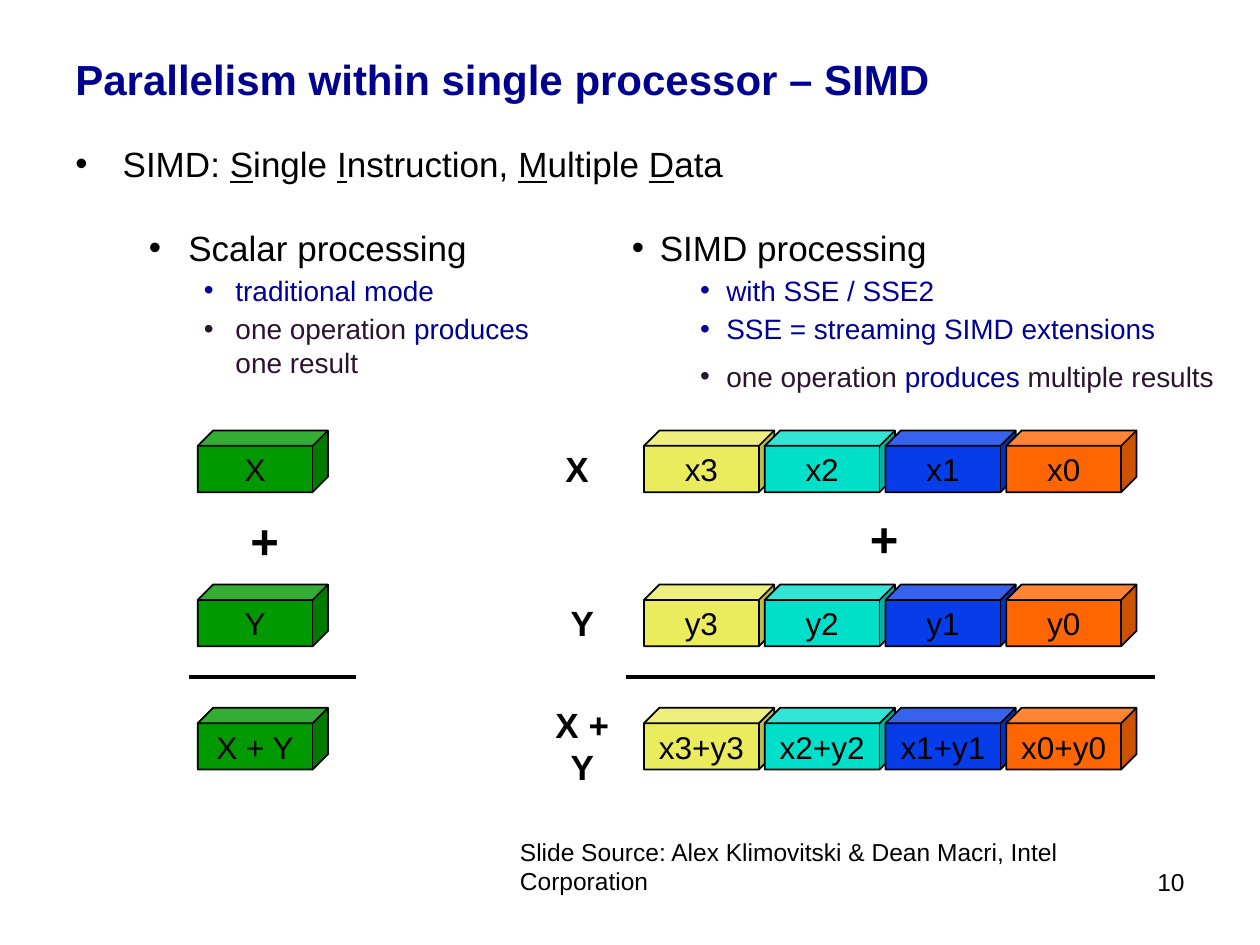
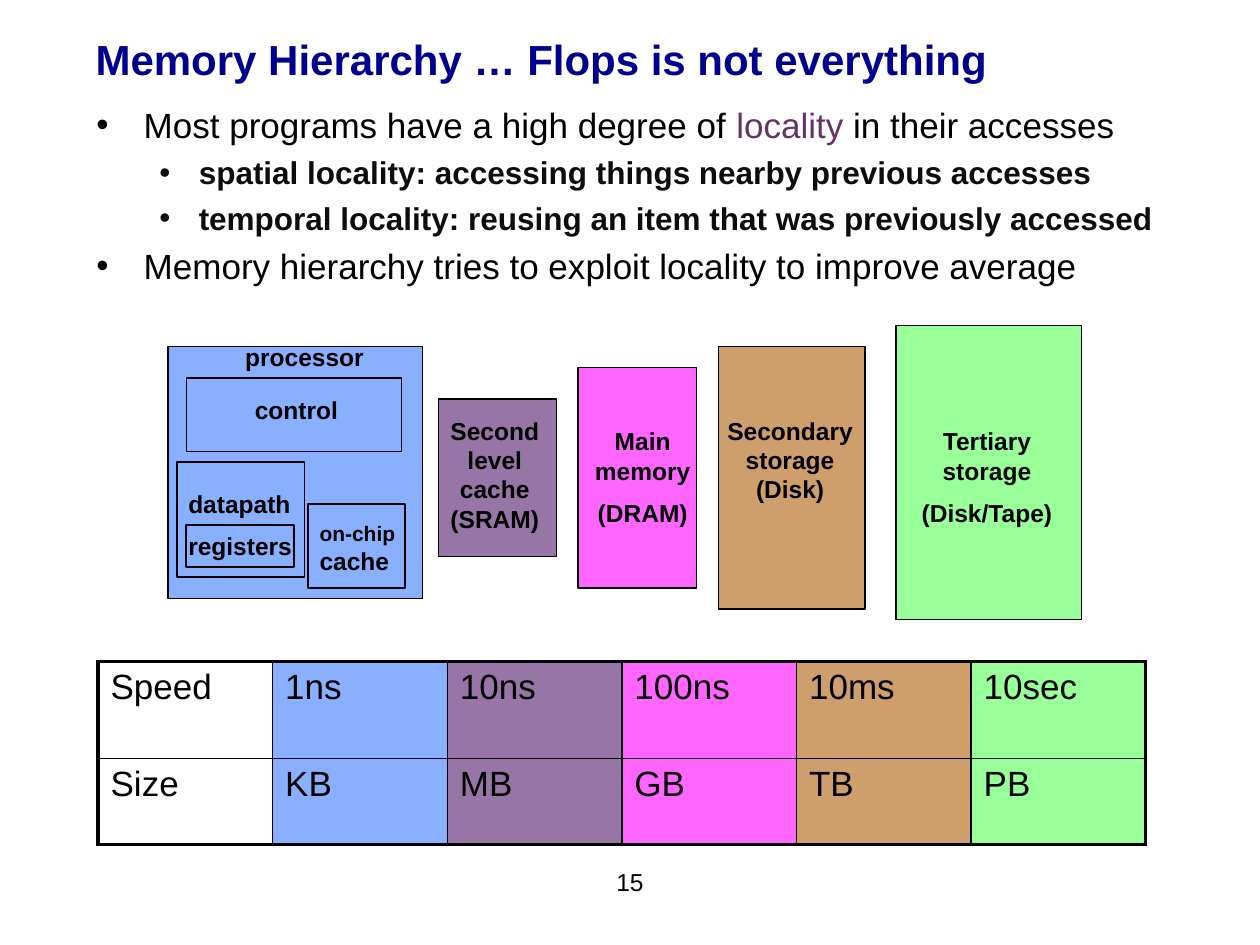
from dataclasses import dataclass

from lxml.etree import SubElement
from pptx import Presentation
from pptx.dml.color import RGBColor
from pptx.enum.shapes import MSO_CONNECTOR, MSO_SHAPE
from pptx.enum.text import MSO_ANCHOR as ANCHOR, PP_ALIGN as ALIGN
from pptx.oxml.ns import qn
from pptx.util import Pt


@dataclass(frozen=True)
class Theme:
    font: str = "Arial"
    # colours
    ink: str = "000000"
    soft_ink: str = "0D0D0D"
    title: str = "000090"
    accent: str = "000099"
    plum: str = "2B142D"
    locality: str = "663366"
    scalar: str = "009900"
    lanes: tuple = ("EAEC5E", "00DFCA", "063DE8", "FF6600")
    levels: tuple = ("89B0FF", "9775A7", "FF66FF", "CF9E6D", "99FF99")
    # type sizes
    sign: int = 28
    heading: int = 24
    body: int = 20
    cube: int = 18
    detail: int = 16
    small: int = 14
    tiny: int = 12
    # line widths
    thin: float = 1
    rule: float = 2
    frame: float = 2.25


T = Theme()


def add_text(p, text, *, size=T.body, color=T.ink, bold=False, underline=False):
    """Add text to a paragraph, turning each newline into a line break."""
    for i, line in enumerate(text.split("\n")):
        if i:
            p.add_line_break()
        if not line:
            continue
        r = p.add_run()
        r.text = line
        f = r.font
        f.name, f.size, f.bold, f.underline = T.font, Pt(size), bold, underline
        f.color.rgb = RGBColor.from_string(color)


def set_bullet(p, level, margin, hang):
    p.level = level
    pPr = p._p.get_or_add_pPr()
    pPr.set("marL", str(Pt(margin)))
    pPr.set("indent", str(-Pt(hang)))
    SubElement(pPr, qn("a:buFont")).set("typeface", T.font)
    SubElement(pPr, qn("a:buChar")).set("char", "•")


def set_border(cell, side, width):
    ln = SubElement(cell._tc.get_or_add_tcPr(), qn(f"a:ln{side}"), w=str(Pt(width)))
    fill = SubElement(ln, qn("a:solidFill"))
    SubElement(fill, qn("a:srgbClr"), val=T.ink)


class Deck:
    def __init__(self, width, height):
        self.prs = Presentation()
        self.prs.slide_width, self.prs.slide_height = Pt(width), Pt(height)
        self.s = None

    def new_slide(self):
        self.s = self.prs.slides.add_slide(self.prs.slide_layouts[6])

    def frame(self, x, y, w, h, wrap=True, anchor=ANCHOR.TOP):
        tf = self.s.shapes.add_textbox(Pt(x), Pt(y), Pt(w), Pt(h)).text_frame
        tf.word_wrap, tf.vertical_anchor = wrap, anchor
        return tf

    def text(self, x, y, w, h, *paragraphs, align=ALIGN.LEFT, wrap=True,
             anchor=ANCHOR.TOP, gap=7.5, **fmt):
        tf = self.frame(x, y, w, h, wrap, anchor)
        for i, text in enumerate(paragraphs):
            p = tf.add_paragraph() if i else tf.paragraphs[0]
            p.alignment = align
            if i:
                p.space_before = Pt(gap)
            add_text(p, text, **fmt)
        return tf

    def title(self, x, y, w, h, text):
        self.text(x, y, w, h, text, anchor=ANCHOR.MIDDLE,
                  size=T.heading, color=T.title, bold=True)

    def bullets(self, x, y, w, h, indents, gap, items):
        """Items are (level, runs) or (level, runs, gap); runs are (text, format)."""
        tf = self.frame(x, y, w, h)
        for i, (level, runs, *own_gap) in enumerate(items):
            p = tf.add_paragraph() if i else tf.paragraphs[0]
            set_bullet(p, level, *indents[level])
            if i:
                p.space_before = Pt(own_gap[0] if own_gap else gap)
            for text, fmt in runs:
                add_text(p, text, **fmt)

    def shape(self, kind, x, y, w, h, fill=None):
        sp = self.s.shapes.add_shape(kind, Pt(x), Pt(y), Pt(w), Pt(h))
        sp.shadow.inherit = False
        if fill:
            sp.fill.solid()
            sp.fill.fore_color.rgb = RGBColor.from_string(fill)
        else:
            sp.fill.background()
        sp.line.color.rgb = RGBColor.from_string(T.ink)
        sp.line.width = Pt(T.thin)
        return sp

    def cube(self, x, y, text, fill):
        tf = self.shape(MSO_SHAPE.CUBE, x, y, 74.5, 35.25, fill).text_frame
        tf.word_wrap, tf.vertical_anchor = False, ANCHOR.MIDDLE
        p = tf.paragraphs[0]
        p.alignment = ALIGN.CENTER
        add_text(p, text, size=T.cube)

    def rect(self, x, y, w, h, fill=None):
        self.shape(MSO_SHAPE.RECTANGLE, x, y, w, h, fill)

    def hline(self, x1, x2, y):
        c = self.s.shapes.add_connector(
            MSO_CONNECTOR.STRAIGHT, Pt(x1), Pt(y), Pt(x2), Pt(y))
        c.line.color.rgb = RGBColor.from_string(T.ink)
        c.line.width = Pt(T.rule)
        SubElement(c._element.spPr, qn("a:effectLst"))

    def table(self, x, y, col_width, row_heights, rows, fills):
        """Draw a grid with one fill a column and a heavier outer frame."""
        n_rows, n_cols = len(rows), len(fills)
        tbl = self.s.shapes.add_table(
            n_rows, n_cols, Pt(x), Pt(y),
            Pt(col_width * n_cols), Pt(sum(row_heights))).table
        tbl.first_row = tbl.horz_banding = False
        for col in tbl.columns:
            col.width = Pt(col_width)
        for i, (row, height) in enumerate(zip(rows, row_heights)):
            tbl.rows[i].height = Pt(height)
            for j, (text, fill) in enumerate(zip(row, fills)):
                cell = tbl.cell(i, j)
                outer = {"L": j == 0, "R": j == n_cols - 1,
                         "T": i == 0, "B": i == n_rows - 1}
                for side, is_outer in outer.items():
                    set_border(cell, side, T.frame if is_outer else T.thin)
                if fill:
                    cell.fill.solid()
                    cell.fill.fore_color.rgb = RGBColor.from_string(fill)
                else:
                    cell.fill.background()
                add_text(cell.text_frame.paragraphs[0], text)


BODY_INDENTS = ((27, 27), (58.5, 22.5))


def simd_slide(d):
    d.new_slide()
    d.title(36, 18, 588, 54, "Parallelism within single processor – SIMD")
    acronym = [("SIMD: ", {})]
    for word, end in (("Single", " "), ("Instruction", ", "),
                      ("Multiple", " "), ("Data", "")):
        acronym += [(word[0], {"underline": True}), (word[1:] + end, {})]
    d.bullets(36, 78, 636, 40, BODY_INDENTS, 4.5, [(0, acronym)])

    blue = {"size": T.detail, "color": T.accent}
    plum = {"size": T.detail, "color": T.plum}
    d.bullets(78, 126, 313, 120, ((22.5, 22.5), (49.5, 18)), 2.75, [
        (0, [("Scalar processing", {})]),
        (1, [("traditional mode", blue)]),
        (1, [("one operation", plum), (" produces\n", blue), ("one result", plum)]),
    ])
    d.bullets(354, 126, 366, 108, ((16, 16), (54, 15)), 2.75, [
        (0, [("SIMD processing", {})]),
        (1, [("with SSE / SSE2", blue)]),
        (1, [("SSE = streaming SIMD extensions", blue)]),
        (1, [("one operation ", plum), ("produces ", blue),
             ("multiple results", plum)], 8),
    ])

    operands = (
        (246, "X", 301, ("x3", "x2", "x1", "x0")),
        (334, "Y", 304, ("y3", "y2", "y1", "y0")),
        (404.5, "X + Y", 304, ("x3+y3", "x2+y2", "x1+y1", "x0+y0")),
    )
    for y, name, label_x, lanes in operands:
        d.cube(113, y, name, T.scalar)
        for i, (lane, color) in enumerate(zip(lanes, T.lanes)):
            d.cube(368 + 69 * i, y, lane, color)
        d.text(label_x, y + 6, 57.5, 31, name, align=ALIGN.CENTER,
               anchor=ANCHOR.MIDDLE, bold=True)
    for x, y in ((136, 288), (490, 287)):
        d.text(x, y, 42, 40, "+", wrap=False, size=T.sign, bold=True)
    for x1, x2 in ((108, 203.5), (357.5, 660)):
        d.hline(x1, x2, 386.75)

    d.text(290, 474.5, 359, 41,
           "Slide Source: Alex Klimovitski & Dean Macri, Intel Corporation",
           size=T.small)
    d.text(606, 492, 78, 30, "10", align=ALIGN.RIGHT, size=T.small)


def memory_slide(d):
    d.new_slide()
    d.title(47.5, 13.5, 577, 40, "Memory Hierarchy … Flops is not everything")
    strong = {"size": T.cube, "color": T.soft_ink, "bold": True}
    d.bullets(48, 55.5, 630, 106.5, BODY_INDENTS, 4.5, [
        (0, [("Most programs have a high degree of ", {}),
             ("locality", {"color": T.locality}), (" in their accesses", {})]),
        (1, [("spatial locality: accessing things nearby previous accesses", strong)]),
        (1, [("temporal locality: reusing an item that was previously accessed",
              strong)]),
        (0, [("Memory hierarchy tries to exploit locality to improve average", {})]),
    ])

    level_boxes = ((96, 198, 145.5, 144), (250.5, 228, 67.5, 90),
                   (330.5, 210, 67.5, 126), (410.5, 198, 84, 150),
                   (512, 186, 106, 168))
    for box, color in zip(level_boxes, T.levels):
        d.rect(*box, color)
    processor_parts = ((106.5, 216, 123, 42), (106.5, 300, 61.5, 24),
                       (176, 288, 55.5, 48), (101, 264, 73, 66))
    for box in processor_parts:
        d.rect(*box)

    label = {"size": T.small, "bold": True}
    for x, y, name in ((133, 192, "processor"), (138.5, 222, "control"),
                       (100.5, 276, "datapath"), (100.5, 300, "registers")):
        d.text(x, y, 84, 24.5, name, wrap=False, **label)
    cache = d.text(175.5, 294, 62, 39, "on-chip\n", size=T.tiny, bold=True)
    add_text(cache.paragraphs[0], "cache", **label)
    for x, y, w, *lines in (
            (245, 234, 75.5, "Second level cache (SRAM)"),
            (330.5, 240, 73.5, "Main memory", "(DRAM)"),
            (406.5, 234, 90, "Secondary storage (Disk)"),
            (515, 240, 98, "Tertiary storage", "(Disk/Tape)")):
        d.text(x, y, w, 67, *lines, align=ALIGN.CENTER, **label)

    d.table(56, 378, 99.8, (55.5, 49), (
        ("Speed", "1ns", "10ns", "100ns", "10ms", "10sec"),
        ("Size", "KB", "MB", "GB", "TB", "PB"),
    ), (None, *T.levels))
    d.text(246, 492, 228, 37.5, "15", align=ALIGN.CENTER, size=T.small)


def main():
    d = Deck(720, 540)
    simd_slide(d)
    memory_slide(d)
    d.prs.save("out.pptx")


if __name__ == "__main__":
    main()
